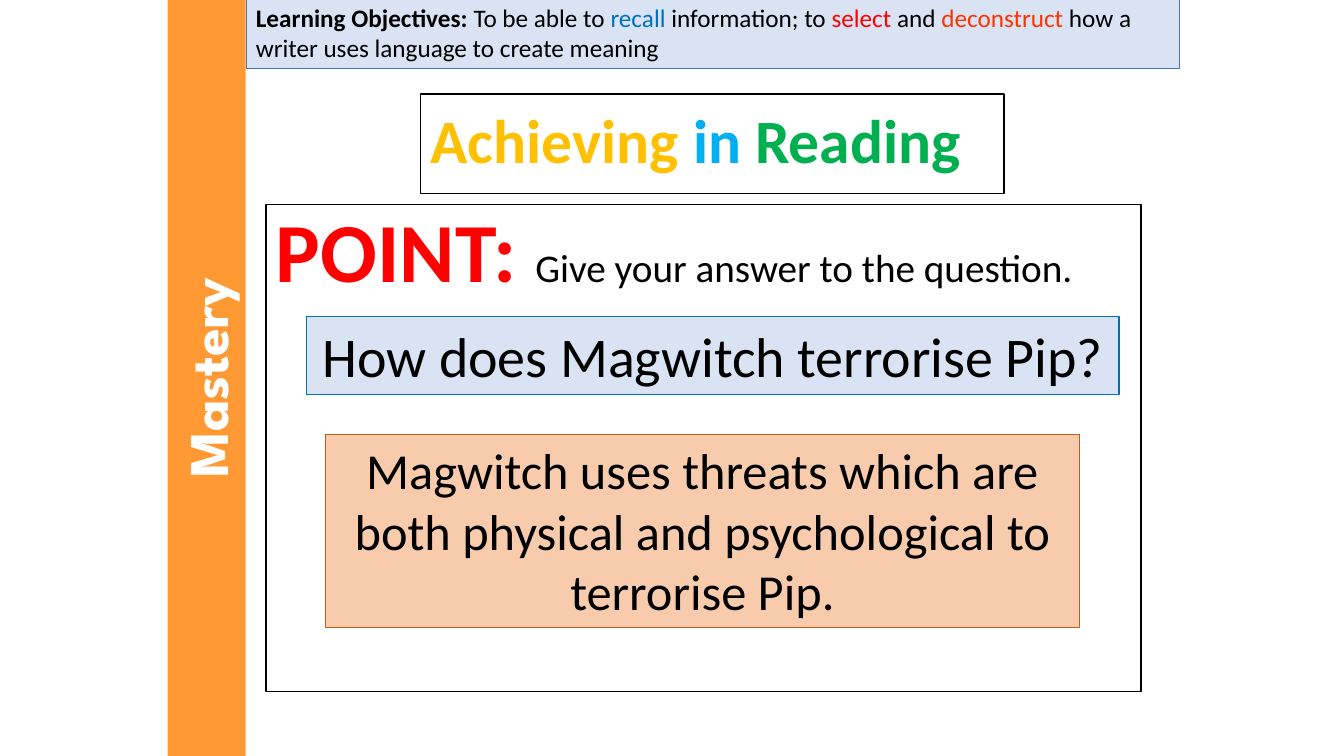
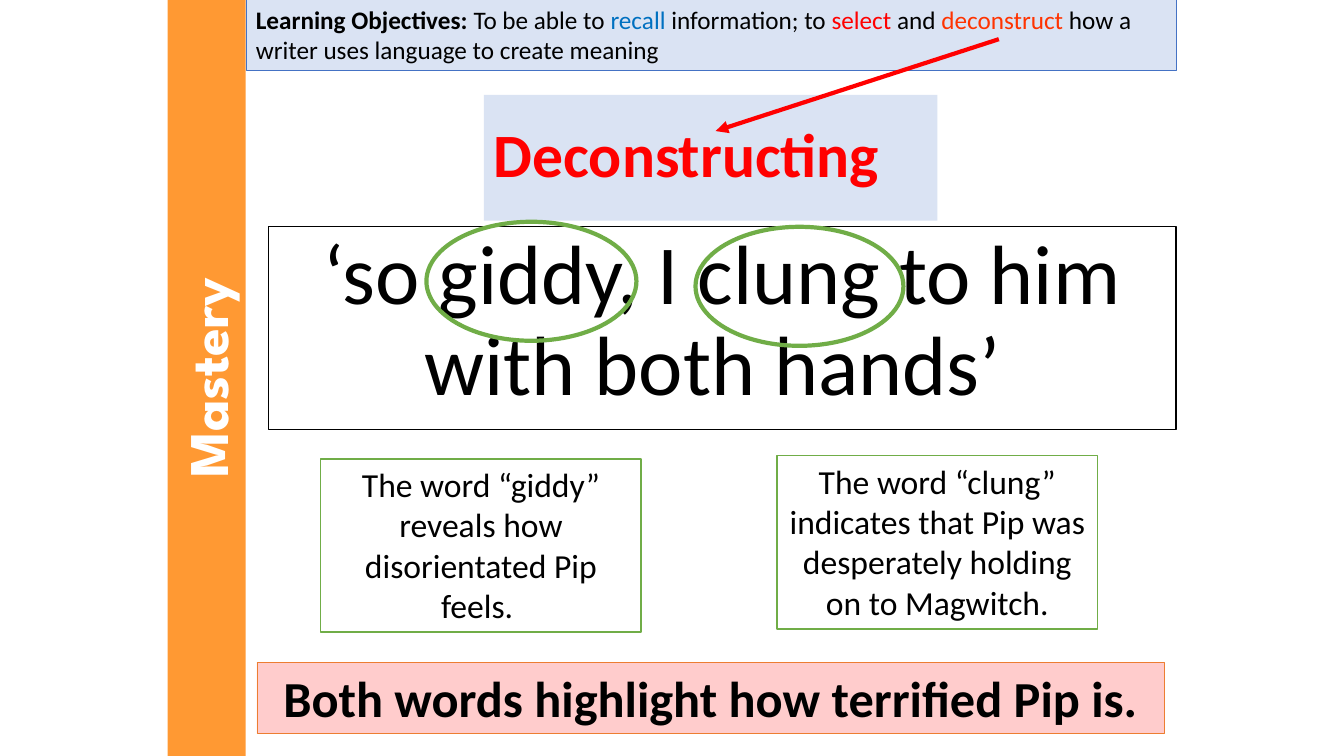
import pptx
import pptx.util
import pptx.dml.color
import pptx.enum.shapes
import pptx.enum.text
import pptx.oxml
import pptx.oxml.ns

Pt = pptx.util.Pt
SHAPE = pptx.enum.shapes.MSO_SHAPE
ALIGN = pptx.enum.text.PP_ALIGN
ANCHOR = pptx.enum.text.MSO_ANCHOR

COLORS = {
    "white": "FFFFFF",
    "black": "000000",
    "pale_blue": "DAE3F3",
    "border_blue": "4472C4",
    "blue": "0070C0",
    "sky": "00B0F0",
    "red": "FF0000",
    "vermilion": "FF3300",
    "gold": "FFC000",
    "leaf": "00B050",
    "green": "70AD47",
    "peach": "F8CBAD",
    "rust": "C55A11",
    "orange": "ED7D31",
    "pink": "FFCCCC",
    "band": "FF9933",
}

OBJECTIVES = [
    ("Learning Objectives: ", {"bold": True}),
    ("To be able to ", {}),
    ("recall ", {"color": "blue"}),
    ("information; to ", {}),
    ("select ", {"color": "red"}),
    ("and ", {}),
    ("deconstruct ", {"color": "vermilion"}),
    ("how a writer uses language to create meaning", {}),
]


def rgb(name):
    return pptx.dml.color.RGBColor.from_string(COLORS[name])


def style_font(font, size=None, color=None, bold=None, name=None):
    if size:
        font.size = Pt(size)
    if color:
        font.color.rgb = rgb(color)
    if bold is not None:
        font.bold = bold
    if name:
        font.name = name


def add_outline(s, kind, box, fill=None, line=None, width=1):
    sp = s.shapes.add_shape(kind, *(Pt(v) for v in box))
    sp.shadow.inherit = False
    if fill:
        sp.fill.solid()
        sp.fill.fore_color.rgb = rgb(fill)
    else:
        sp.fill.background()
    if line:
        sp.line.color.rgb = rgb(line)
        sp.line.width = Pt(width)
    else:
        sp.line.fill.background()
    return sp


def add_panel(s, box, runs, size, fill="white", line=None, width=1,
              color="black", bold=False, font="Calibri", align=ALIGN.CENTER,
              anchor=ANCHOR.TOP, wrap=True, spacing=1.0, before=0):
    sp = add_outline(s, SHAPE.RECTANGLE, box, fill, line, width)
    tf = sp.text_frame
    tf.word_wrap = wrap
    tf.vertical_anchor = anchor
    p = tf.paragraphs[0]
    p.alignment = align
    p.line_spacing = spacing
    p.space_before = Pt(before)
    style_font(p.font, size, color, bold, font)
    for text, changes in [(runs, {})] if isinstance(runs, str) else runs:
        r = p.add_run()
        r.text = text
        style_font(r.font, **changes)
    return sp


def add_title(s, box, runs, **look):
    add_panel(s, box, runs, 44, bold=True, align=ALIGN.LEFT,
              anchor=ANCHOR.MIDDLE, spacing=0.9, **look)


def add_body(s, box, runs, **look):
    add_panel(s, box, runs, 60, line="black", spacing=0.9, before=10, **look)


def add_ring(s, box):
    add_outline(s, SHAPE.OVAL, box, line="green", width=3)


def add_arrow(s, start, end, color, width):
    c = s.shapes.add_connector(pptx.enum.shapes.MSO_CONNECTOR.STRAIGHT,
                               *(Pt(v) for v in start + end))
    c.line.color.rgb = rgb(color)
    c.line.width = Pt(width)
    ns = pptx.oxml.ns.nsdecls("a")
    c.line._get_or_add_ln().append(
        pptx.oxml.parse_xml(f'<a:tailEnd {ns} type="triangle"/>'))
    c._element.spPr.append(pptx.oxml.parse_xml(f"<a:effectLst {ns}/>"))


def add_objectives(s, top, width):
    add_panel(s, (175.7, top, width, 51), OBJECTIVES, 18, fill="pale_blue",
              line="border_blue", width=0.5, align=ALIGN.LEFT)


def add_band(s):
    sp = add_panel(s, (-122.4, 242, 540, 55.7), "Mastery", 40, fill="band",
                   color="white", bold=True, font="League Spartan")
    sp.rotation = 270


def build_point(s):
    add_title(s, (300.3, 67, 417, 71.3), [
        ("Achieving ", {"color": "gold"}),
        ("in ", {"color": "sky"}),
        ("Reading", {"color": "leaf"}),
    ], line="black")
    add_body(s, (190, 146.2, 625, 347.7), [
        ("POINT: ", {"color": "red", "bold": True}),
        ("Give your answer to the question.", {"size": 28}),
    ], align=ALIGN.LEFT)
    add_panel(s, (219, 226, 580.3, 55.7), "How does Magwitch terrorise Pip?",
              40, fill="pale_blue", line="blue", wrap=False)
    add_panel(s, (232.5, 310.3, 538.6, 138),
              "Magwitch uses threats which are both physical and "
              "psychological to terrorise Pip.",
              36, fill="peach", line="rust", width=0.75)
    add_objectives(s, -2, 667)
    add_band(s)


def build_deconstructing(s):
    add_body(s, (192, 162, 648, 144.7),
             "‘so giddy, I clung to him with both hands’ ")
    add_title(s, (345.6, 67.7, 324, 90), "Deconstructing",
              fill="pale_blue", color="red")
    add_objectives(s, -0.7, 664.6)
    add_arrow(s, (713.5, 28), (511.2, 93.6), "red", 3)
    words = [
        ((304.6, 158.4, 150, 85), (229, 327.8),
         "The word “giddy” reveals how disorientated Pip feels. "),
        ((496.8, 162, 148.5, 85), (555, 325.4),
         "The word “clung” indicates that Pip was desperately holding "
         "on to Magwitch."),
    ]
    for ring, note, text in words:
        add_ring(s, ring)
        add_panel(s, (*note, 229, 123.8), text, 24, line="green")
    add_panel(s, (183.6, 473, 648, 51),
              "Both words highlight how terrified Pip is.", 36, fill="pink",
              line="orange", width=0.5, bold=True)
    add_band(s)


def main():
    prs = pptx.Presentation()
    prs.slide_width = Pt(960)
    prs.slide_height = Pt(540)
    for build in (build_point, build_deconstructing):
        build(prs.slides.add_slide(prs.slide_layouts[6]))
    prs.save("out.pptx")


if __name__ == "__main__":
    main()
